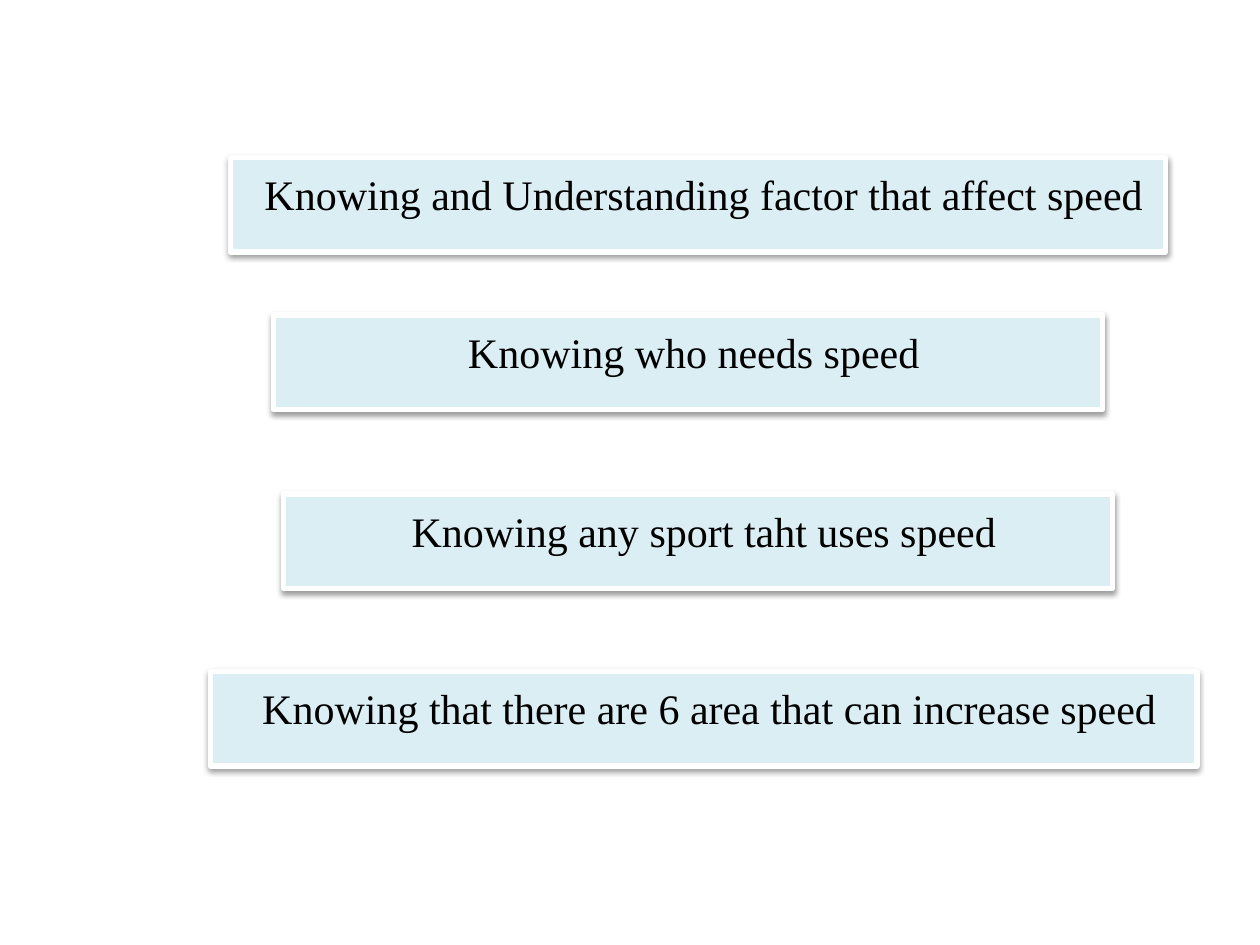
from typing import NamedTuple

from lxml import etree
from pptx import Presentation
from pptx.dml.color import RGBColor
from pptx.enum import shapes, text
from pptx.oxml import ns
from pptx.util import Inches, Pt

PALE_BLUE = RGBColor(0xDB, 0xEE, 0xF4)
WHITE = RGBColor(0xFF, 0xFF, 0xFF)
BLACK = RGBColor(0x00, 0x00, 0x00)
BOX_HEIGHT = 0.75


class Goal(NamedTuple):
    left: float
    top: float
    width: float
    label: str


GOALS = [
    Goal(1.83, 1.25, 7.42, "Knowing and Understanding factor that affect speed"),
    Goal(2.17, 2.5, 6.58, "Knowing who needs speed"),
    Goal(2.25, 3.92, 6.58, "Knowing any sport taht uses speed"),
    Goal(1.67, 5.33, 7.83, "Knowing that there are 6 area that can increase speed"),
]


def add_drop_shadow(sp) -> None:
    """Cast a soft 38% black shadow straight down."""
    sp.shadow.inherit = False
    effects = sp._element.spPr.find(ns.qn("a:effectLst"))
    shadow = etree.SubElement(
        effects, ns.qn("a:outerShdw"), blurRad=str(Pt(3.1)), dist=str(Pt(1.6)),
        dir="5400000", rotWithShape="0")
    color = etree.SubElement(shadow, ns.qn("a:srgbClr"), val=str(BLACK))
    etree.SubElement(color, ns.qn("a:alpha"), val="38000")


def add_goal(slide, goal: Goal) -> None:
    sp = slide.shapes.add_shape(
        shapes.MSO_SHAPE.RECTANGLE, Inches(goal.left), Inches(goal.top),
        Inches(goal.width), Inches(BOX_HEIGHT))
    sp.fill.solid()
    sp.fill.fore_color.rgb = PALE_BLUE
    sp.line.color.rgb = WHITE
    sp.line.width = Pt(3)
    add_drop_shadow(sp)

    tf = sp.text_frame
    tf.word_wrap = True
    tf.vertical_anchor = text.MSO_ANCHOR.TOP
    tf.margin_top = Inches(0.09)
    p = tf.paragraphs[0]
    p.text = goal.label
    p.alignment = text.PP_ALIGN.CENTER
    pPr = p._p.get_or_add_pPr()
    pPr.set("marL", str(Inches(0.4)))
    pPr.set("indent", str(Inches(-0.31)))
    p.font.name = "Times New Roman"
    p.font.size = Pt(24)
    p.font.color.rgb = BLACK


def main() -> None:
    prs = Presentation()
    prs.slide_width, prs.slide_height = Inches(10), Inches(7.5)
    blank_layout = prs.slide_layouts[6]
    slide = prs.slides.add_slide(blank_layout)
    for goal in GOALS:
        add_goal(slide, goal)
    prs.save("out.pptx")


if __name__ == "__main__":
    main()
